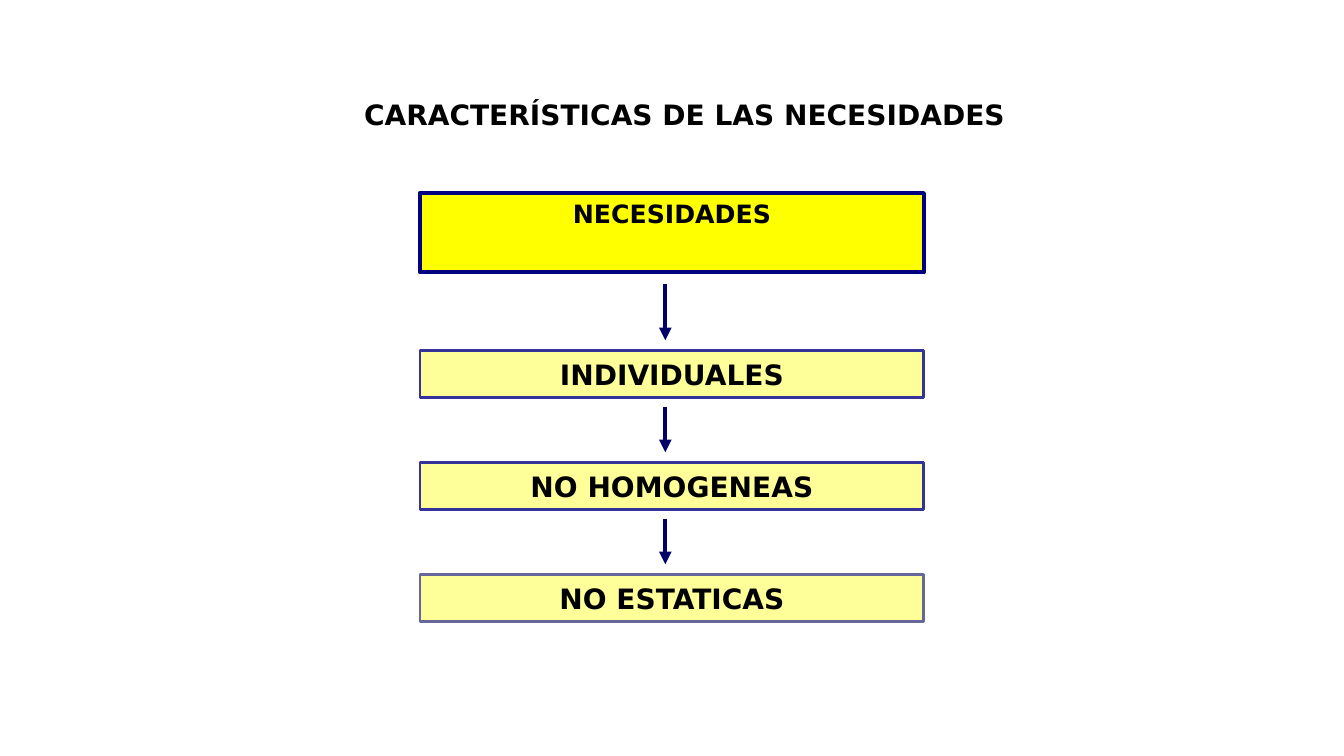
import dataclasses

import pptx
import pptx.dml.color
import pptx.enum.shapes
import pptx.enum.text
import pptx.oxml.ns
import pptx.util
from lxml import etree

Pt = pptx.util.Pt
ANCHOR = pptx.enum.text.MSO_ANCHOR


@dataclasses.dataclass(frozen=True)
class Theme:
    font: str = "DejaVu Sans"
    ink: str = "000000"
    head: str = "FFFF00"
    item: str = "FFFF99"
    navy: str = "000080"
    blue: str = "333399"
    slate: str = "666699"
    arrow: str = "000066"
    large: float = 20
    small: float = 18


THEME = Theme()


def color(code):
    return pptx.dml.color.RGBColor.from_string(code)


def write(shape, text, size=THEME.large, anchor=ANCHOR.MIDDLE):
    frame = shape.text_frame
    frame.word_wrap = True
    frame.auto_size = pptx.enum.text.MSO_AUTO_SIZE.NONE
    frame.vertical_anchor = anchor
    frame.margin_left = frame.margin_right = Pt(7.2)
    frame.margin_top = frame.margin_bottom = Pt(3.6)
    para = frame.paragraphs[0]
    para.alignment = pptx.enum.text.PP_ALIGN.CENTER
    para.line_spacing = 1.0
    para.space_before = Pt(0)
    run = para.add_run()
    run.text = text
    run.font.name = THEME.font
    run.font.size = Pt(size)
    run.font.bold = True
    run.font.color.rgb = color(THEME.ink)


def add_title(slide, text):
    title = slide.shapes.title
    title.left, title.top = Pt(186), Pt(66.5)
    title.width, title.height = Pt(606), Pt(30)
    write(title, text)


def add_box(group, top, high, fill, edge, width, text, **style):
    box = group.shapes.add_shape(
        pptx.enum.shapes.MSO_SHAPE.RECTANGLE,
        Pt(300), Pt(top), Pt(360), Pt(high))
    box.shadow.inherit = False
    box.fill.solid()
    box.fill.fore_color.rgb = color(fill)
    box.line.color.rgb = color(edge)
    box.line.width = Pt(width)
    write(box, text, **style)


def add_arrow(group, top, end):
    arrow = group.shapes.add_connector(
        pptx.enum.shapes.MSO_CONNECTOR.STRAIGHT,
        Pt(475.25), Pt(top), Pt(475.25), Pt(end))
    arrow.line.color.rgb = color(THEME.arrow)
    arrow.line.width = Pt(3)
    qn = pptx.oxml.ns.qn
    props = arrow._element.spPr
    etree.SubElement(props.find(qn("a:ln")), qn("a:tailEnd"), type="triangle")
    etree.SubElement(props, qn("a:effectLst"))


def main():
    deck = pptx.Presentation()
    deck.slide_width, deck.slide_height = Pt(960), Pt(540)
    slide = deck.slides.add_slide(deck.slide_layouts[5])
    add_title(slide, "CARACTERÍSTICAS DE LAS NECESIDADES")
    chain = slide.shapes.add_group_shape()
    add_box(chain, 138, 56.5, THEME.head, THEME.navy, 3, "NECESIDADES",
            size=THEME.small, anchor=ANCHOR.TOP)
    traits = [("INDIVIDUALES", THEME.blue, 40),
              ("NO HOMOGENEAS", THEME.blue, 32.5),
              ("NO ESTATICAS", THEME.slate, 32.5)]
    for index, (text, edge, length) in enumerate(traits):
        top = 250.5 + 80 * index
        end = top - 7.5
        add_arrow(chain, end - length, end)
        add_box(chain, top, 33.5, THEME.item, edge, 2, text)
    deck.save("out.pptx")


if __name__ == "__main__":
    main()
